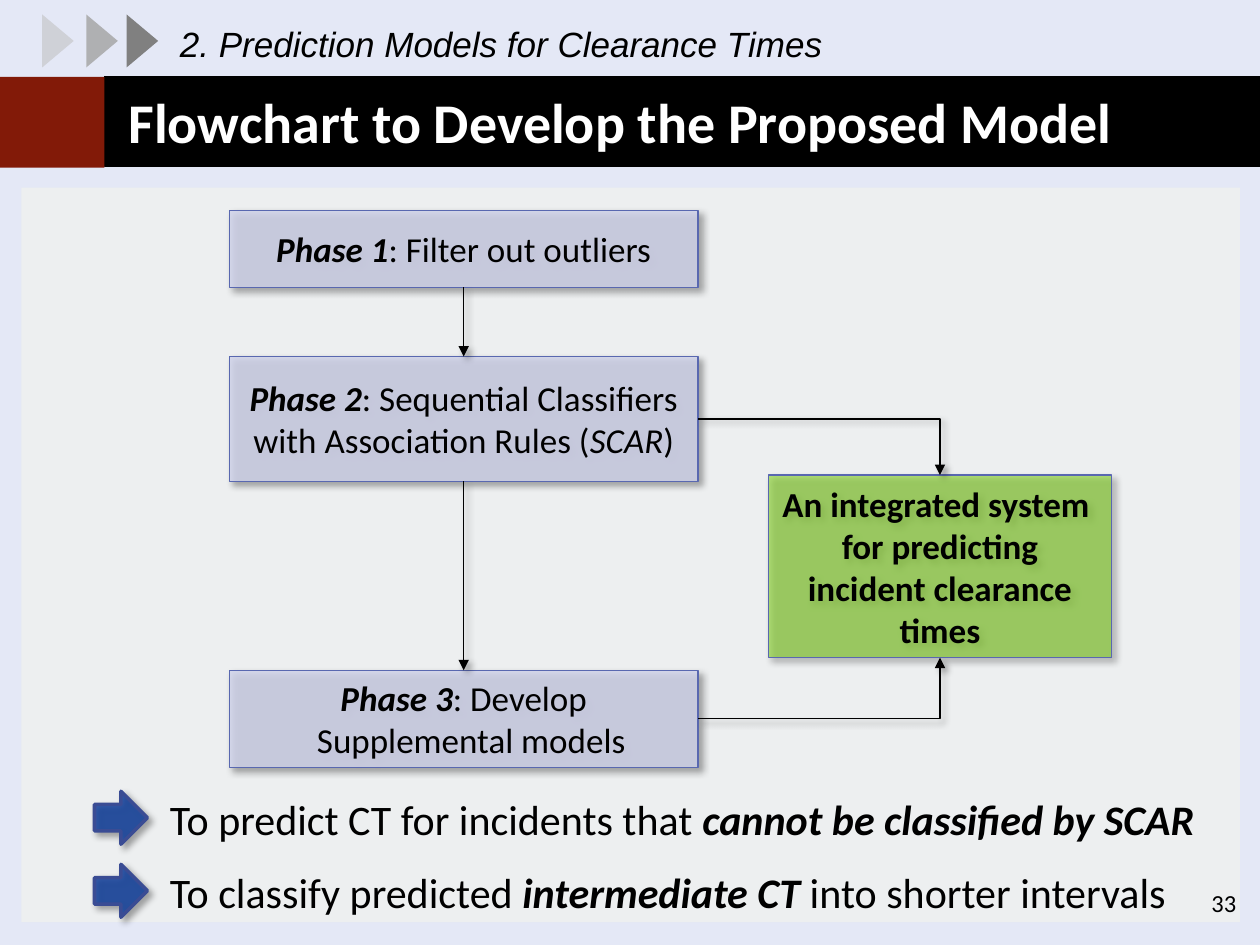
"""Build the flowchart slide for developing the proposed prediction model."""
from lxml.etree import SubElement
from pptx import Presentation
from pptx.dml.color import RGBColor
from pptx.enum.shapes import MSO_CONNECTOR, MSO_SHAPE
from pptx.enum.text import MSO_ANCHOR, PP_ALIGN
from pptx.oxml import parse_xml
from pptx.oxml.ns import nsdecls, qn
from pptx.util import Inches, Pt

THEME = {
    "font": "Calibri", "section_font": "Arial",
    "title": 32, "note": 24, "body": 20, "number": 14,
    "background": "E4E8F6", "ink": "000000", "white": "FFFFFF", "cream": "FFFFCC",
    "red": "821A08", "phase": "D0D3EB", "system": "81D31A", "border": "5968B0",
    "arrow": "003399", "arrow_border": "3A4C94",
}
TITLE = "Flowchart to Develop the Proposed Model"
SECTION = "2. Prediction Models for Clearance Times"
PAGE_NUMBER = "33"
PANEL = (0.17, 1.49, 9.67, 5.83)
CHEVRONS = [(0.92, "808080", 100), (0.6, "A6A6A6", 84), (0.25, "BFBFBF", 56)]
PHASE_LEFT, PHASE_WIDTH = 1.82, 3.72
PHASES = [
    (1.67, 0.61, [("Phase 1", "bi"), (": Filter out outliers", "")]),
    (2.83, 0.99, [("Phase 2", "bi"),
                  (": Sequential Classifiers with Association Rules (", ""),
                  ("SCAR", "i"), (")", "")]),
    (5.32, 0.77, [("Phase 3", "bi"), (": Develop Supplemental models", "")]),
]
SYSTEM_PLACE = (6.1, 3.77, 2.72, 1.45)
SYSTEM = [[("An integrated system ", "b")],
          [("for predicting incident clearance times", "b")]]
NOTES = [
    [("To predict CT for incidents that ", ""), ("cannot be classified by SCAR", "bi")],
    [("To classify predicted ", ""), ("intermediate CT ", "bi"),
     ("into shorter intervals", "")],
]
NOTE_TOP, NOTE_STEP = 6.25, 0.58
TOP, LEFT, BOTTOM, RIGHT = range(4)


def color(name):
    return RGBColor.from_string(THEME.get(name, name))


def write(frame, paragraphs, size, ink="ink", font="font", align=PP_ALIGN.LEFT):
    frame.word_wrap = True
    for index, spans in enumerate(paragraphs):
        para = frame.paragraphs[0] if index == 0 else frame.add_paragraph()
        para.alignment = align
        for text, style in spans:
            span = para.add_run()
            span.text = text
            span.font.name = THEME[font]
            span.font.size = Pt(THEME[size])
            span.font.bold = "b" in style
            span.font.italic = "i" in style
            span.font.color.rgb = color(ink)


def add_text(page, place, spans, size, **look):
    box = page.shapes.add_textbox(*map(Inches, place))
    write(box.text_frame, [spans], size, **look)


def cast_shadow(shape):
    shape._element.spPr.append(parse_xml(
        f'<a:effectLst {nsdecls("a")}><a:outerShdw blurRad="50800" dist="38100" '
        'dir="2700000" algn="tl" rotWithShape="0"><a:srgbClr val="000000">'
        '<a:alpha val="40000"/></a:srgbClr></a:outerShdw></a:effectLst>'))


def add_block(page, place, fill, opacity=100, line=None, width=0.75,
              kind=MSO_SHAPE.RECTANGLE, shadow=False):
    block = page.shapes.add_shape(kind, *map(Inches, place))
    block.fill.solid()
    block.fill.fore_color.rgb = color(fill)
    if opacity < 100:
        tint = block._element.spPr.find(qn("a:solidFill"))[0]
        SubElement(tint, qn("a:alpha")).set("val", str(opacity * 1000))
    if line:
        block.line.color.rgb = color(line)
        block.line.width = Pt(width)
    else:
        block.line.fill.background()
    if shadow:
        cast_shadow(block)
    else:
        block.shadow.inherit = False
    return block


def add_step(page, place, paragraphs, fill, opacity):
    step = add_block(page, place, fill, opacity, "border", shadow=True)
    step.text_frame.vertical_anchor = MSO_ANCHOR.MIDDLE
    write(step.text_frame, paragraphs, "body", align=PP_ALIGN.CENTER)
    return step


def join(page, start, start_side, end, end_side, kind=MSO_CONNECTOR.STRAIGHT):
    link = page.shapes.add_connector(kind, 0, 0, 0, 0)
    link.begin_connect(start, start_side)
    link.end_connect(end, end_side)
    if kind == MSO_CONNECTOR.ELBOW:
        link._element.spPr.find(qn("a:prstGeom")).set("prst", "bentConnector2")
    link.line.color.rgb = color("ink")
    link.line.width = Pt(0.75)
    SubElement(link.line._get_or_add_ln(), qn("a:tailEnd")).set("type", "triangle")
    cast_shadow(link)


def add_frame(page):
    page.background.fill.solid()
    page.background.fill.fore_color.rgb = color("background")
    add_block(page, PANEL, "cream", 20)
    add_block(page, (0.83, 0.61, 9.17, 0.71), "ink", line="ink")
    add_block(page, (0, 0.61, 0.83, 0.72), "red")
    for left, fill, opacity in CHEVRONS:
        chevron = add_block(page, (left, 0.2, 0.42, 0.25), fill, opacity,
                            kind=MSO_SHAPE.ISOSCELES_TRIANGLE)
        chevron.rotation = 90
    add_block(page, PANEL, "white", 20)


def add_title(page):
    title = page.shapes.title
    title.left, title.top, title.width, title.height = map(Inches, (0.92, 0.65, 9, 0.62))
    title.text_frame.vertical_anchor = MSO_ANCHOR.MIDDLE
    write(title.text_frame, [[(TITLE, "b")]], "title", ink="white")
    page.shapes._spTree.append(title._element)


def add_flowchart(page):
    first, second, third = [
        add_step(page, (PHASE_LEFT, top, PHASE_WIDTH, height), [spans], "phase", 80)
        for top, height, spans in PHASES]
    hanging = third.text_frame.paragraphs[0]._p.get_or_add_pPr()
    hanging.set("marL", str(Inches(0.12)))
    hanging.set("indent", str(Inches(-0.12)))
    system = add_step(page, SYSTEM_PLACE, SYSTEM, "system", 56)
    join(page, first, BOTTOM, second, TOP)
    join(page, second, BOTTOM, third, TOP)
    join(page, second, RIGHT, system, TOP, MSO_CONNECTOR.ELBOW)
    join(page, third, RIGHT, system, BOTTOM, MSO_CONNECTOR.ELBOW)


def add_notes(page):
    for index, spans in enumerate(NOTES):
        top = NOTE_TOP + index * NOTE_STEP
        add_text(page, (1.25, top, 8.42, 0.5), spans, "note")
        add_block(page, (0.75, top + 0.03, 0.42, 0.42), "arrow", 76, "arrow_border", 2,
                  MSO_SHAPE.RIGHT_ARROW, shadow=True)


def main():
    deck = Presentation()
    deck.slide_width, deck.slide_height = Inches(10), Inches(7.5)
    page = deck.slides.add_slide(deck.slide_layouts[5])
    add_frame(page)
    add_title(page)
    add_text(page, (7.58, 7, 2.33, 0.35), [(PAGE_NUMBER, "")], "number",
             align=PP_ALIGN.RIGHT)
    add_text(page, (1.33, 0.13, 7.33, 0.44), [(SECTION, "i")], "body",
             font="section_font")
    add_flowchart(page)
    add_notes(page)
    deck.save("out.pptx")


if __name__ == "__main__":
    main()
